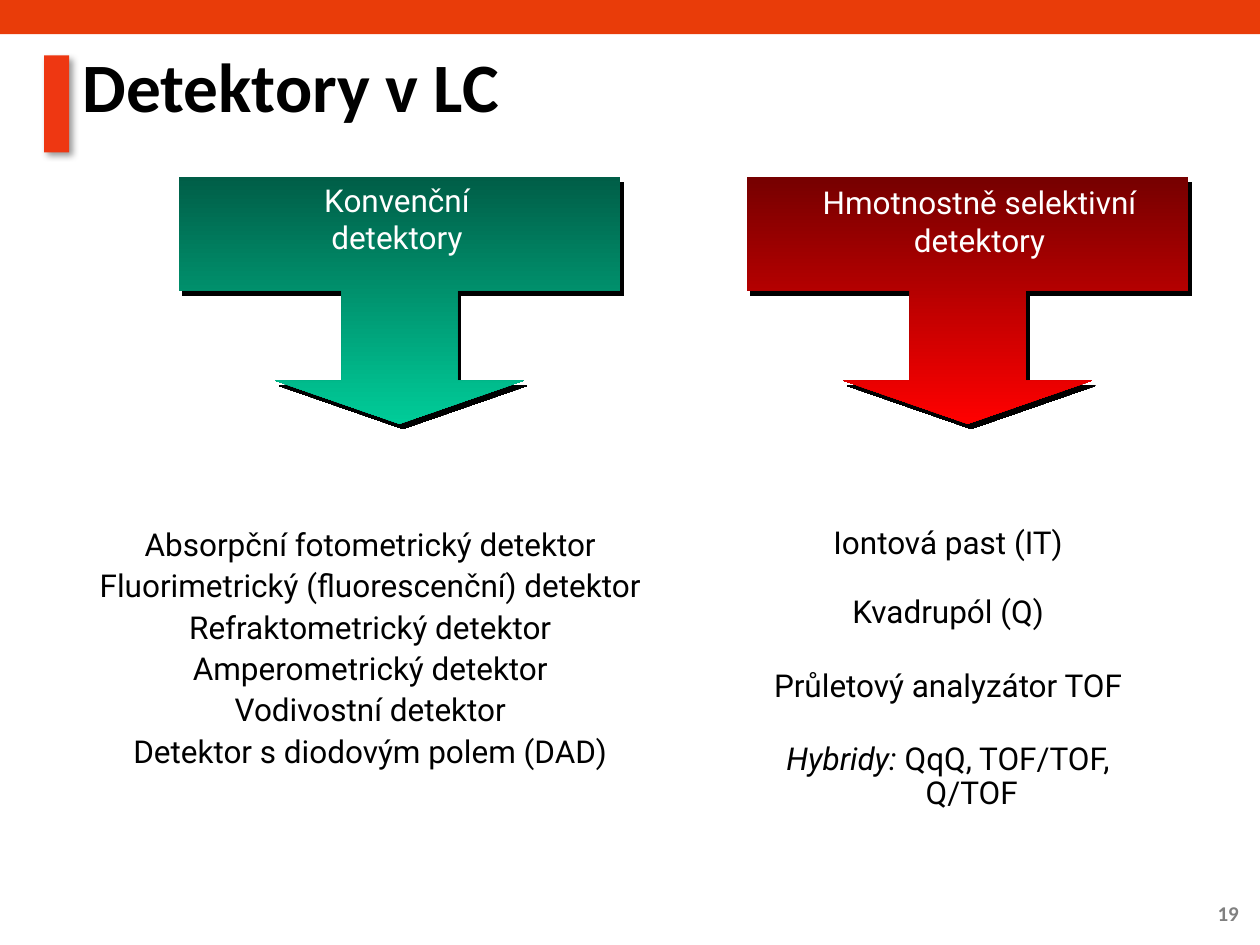
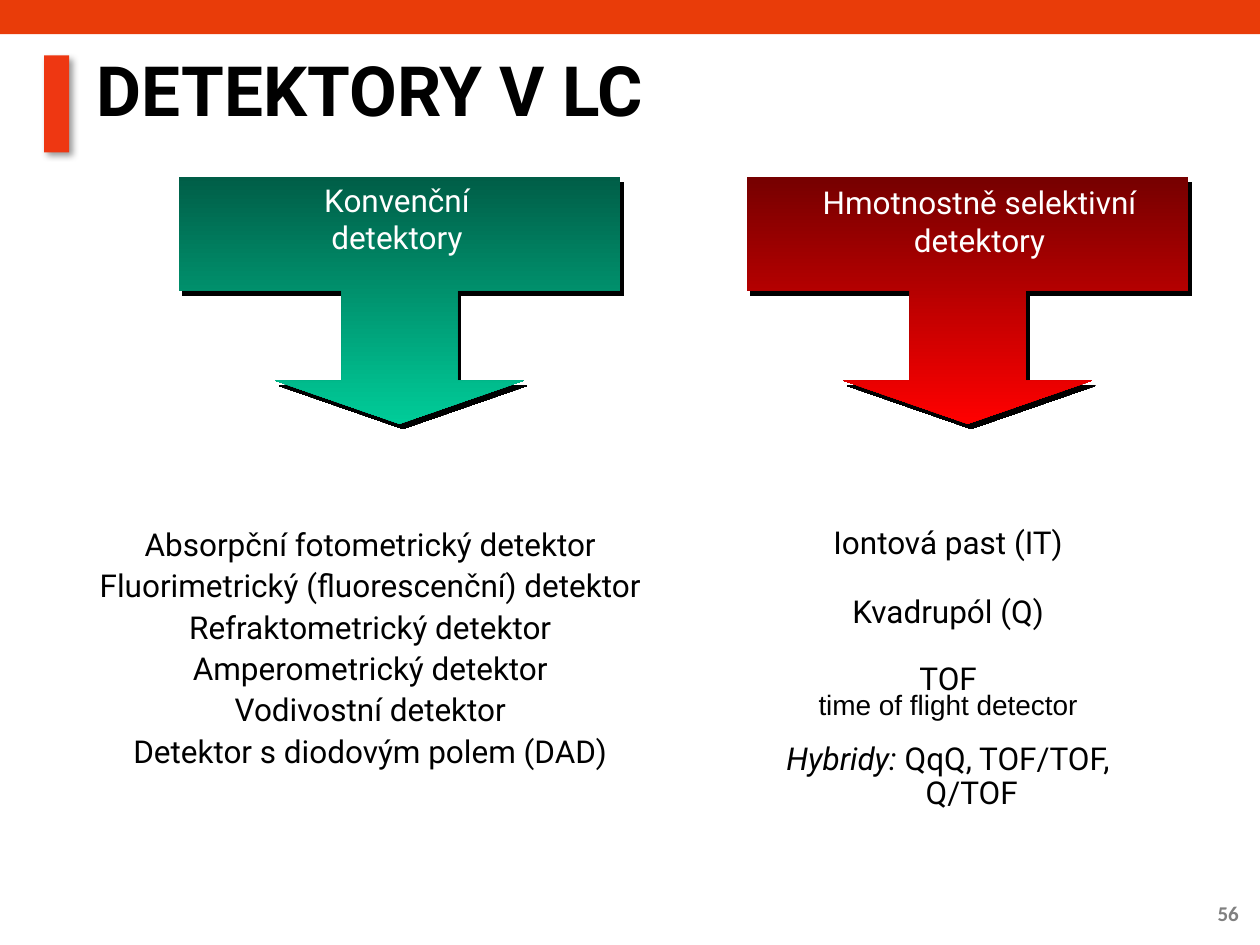
from lxml import etree
from pptx import Presentation
from pptx.dml.color import RGBColor
from pptx.enum.shapes import MSO_SHAPE
from pptx.enum.text import MSO_ANCHOR, MSO_AUTO_SIZE, PP_ALIGN
from pptx.oxml.ns import qn
from pptx.util import Pt

HUES = {
    "band": "E93C09", "mark": "EE3712", "page": "808080",
    "black": "000000", "white": "FFFFFF",
    "wine": "760000", "red": "FF0000",
    "pine": "005E47", "mint": "00CC99",
}
BODY = {"name": "Roboto", "size": Pt(18)}
HEAD = {"size": Pt(39.6), "bold": True}
PAGE = {"name": "Calibri", "size": Pt(12), "bold": True}
NOTE = {"name": "Arial", "size": Pt(16)}
LEAN = {"italic": True}

METHODS = [
    "Absorpční fotometrický detektor",
    "Fluorimetrický (fluorescenční) detektor",
    "Refraktometrický detektor",
    "Amperometrický detektor",
    "Vodivostní detektor",
    "Detektor s diodovým polem (DAD)",
]
HYBRIDS = [[("Hybridy:", LEAN), (" QqQ, TOF/TOF, Q/TOF", {})]]


class Deck:
    """Holds the shared style and the slide being drawn."""

    def __init__(self):
        self.show = Presentation()
        self.show.slide_width, self.show.slide_height = Pt(720), Pt(540)
        self.slide = None

    def start(self, title, font, left, top, inset, page):
        self.slide = self.show.slides.add_slide(self.show.slide_layouts[5])
        self.rect(0, 0, 720, 19.5, "band")
        mark = self.rect(25.2, 31.7, 14.4, 55.4, "mark")
        self.shade(mark, 4, 3, 45, 40)
        self.text(666, 507.6, 49, 28.8, [page], PAGE, "page",
                  align=PP_ALIGN.RIGHT, anchor=MSO_ANCHOR.MIDDLE)
        box = self.slide.shapes.title
        self.place(box, left, top, 655.2, 51.1)
        self.fill_text(box.text_frame, [title], {**HEAD, "name": font}, "black",
                       align=PP_ALIGN.LEFT, anchor=MSO_ANCHOR.MIDDLE, line=0.9)
        box.text_frame.margin_left = Pt(inset)

    def place(self, shape, *spot):
        for key, val in zip(("left", "top", "width", "height"), spot):
            setattr(shape, key, Pt(val))

    def hue(self, key):
        return RGBColor.from_string(HUES[key])

    def rect(self, x, y, w, h, hue):
        shape = self.slide.shapes.add_shape(
            MSO_SHAPE.RECTANGLE, Pt(x), Pt(y), Pt(w), Pt(h))
        shape.shadow.inherit = False
        shape.fill.solid()
        shape.fill.fore_color.rgb = self.hue(hue)
        shape.line.fill.background()
        return shape

    def shade(self, shape, blur, dist, angle, alpha):
        shape.shadow.inherit = False
        glow = shape._element.spPr.find(qn("a:effectLst"))
        cast = etree.SubElement(
            glow, qn("a:outerShdw"), blurRad=str(Pt(blur)), dist=str(Pt(dist)),
            dir=str(angle * 60000), algn="ctr", rotWithShape="0")
        tint = etree.SubElement(cast, qn("a:srgbClr"), val=HUES["black"])
        etree.SubElement(tint, qn("a:alpha"), val=str(alpha * 1000))

    def arrow(self, x, dark, light):
        shape = self.slide.shapes.add_shape(
            MSO_SHAPE.RIGHT_ARROW_CALLOUT, Pt(x), Pt(45.4), Pt(141.1), Pt(252.4))
        shape.rotation = 90
        for i, val in enumerate((0.469, 0.502, 0.174, 0.46)):
            shape.adjustments[i] = val
        shape.fill.gradient()
        shape.fill.gradient_angle = 0
        for stop, key in zip(shape.fill.gradient_stops, (dark, light)):
            stop.color.rgb = self.hue(key)
        shape.line.fill.background()
        self.shade(shape, 0, 3.6, 56, 100)

    def text(self, x, y, w, h, lines, font=BODY, hue="black", **form):
        box = self.slide.shapes.add_textbox(Pt(x), Pt(y), Pt(w), Pt(h))
        self.fill_text(box.text_frame, lines, font, hue, **form)

    def fill_text(self, frame, lines, font, hue, align=PP_ALIGN.CENTER,
                  anchor=MSO_ANCHOR.TOP, line=1.0, gap=0, hang=0):
        frame.word_wrap = True
        frame.auto_size = MSO_AUTO_SIZE.NONE
        frame.vertical_anchor = anchor
        for i, runs in enumerate(lines):
            para = frame.add_paragraph() if i else frame.paragraphs[0]
            form = {"alignment": align, "line_spacing": line,
                    "space_before": Pt(gap if i else 0)}
            for key, val in form.items():
                setattr(para, key, val)
            if hang:
                props = para._p.get_or_add_pPr()
                props.set("marL", str(Pt(hang)))
                props.set("indent", str(Pt(-hang)))
            for words, extra in [(runs, {})] if isinstance(runs, str) else runs:
                run = para.add_run()
                run.text = words
                for key, val in {**font, **extra}.items():
                    setattr(run.font, key, val)
                run.font.color.rgb = self.hue(hue)

    def label(self, x, y, w, lines):
        self.text(x, y, w, 77.8, lines, hue="white", line=0.9, gap=2.1)

    def items(self, x, y, w, lines, line=0.9, gap=4.2):
        self.text(x, y, w, 30.2, lines, line=line, gap=gap, hang=27)

    def body(self, flight, pitch):
        self.arrow(482.4, "wine", "red")
        self.label(433.4, 103.7, 252.7, ["Hmotnostně selektivní", "detektory"])
        self.arrow(157.7, "pine", "mint")
        self.label(103, 102.2, 247.7, ["Konvenční", "detektory"])
        rows = [(["Iontová past (IT)"], 1.0), (["Kvadrupól (Q)"], 0.9),
                (flight, pitch), (HYBRIDS, 0.9)]
        for i, (lines, line) in enumerate(rows):
            self.items(421.9, 295.2 + 42 * i, 239.8, lines, line, 0)
        self.items(15.1, 298.8, 393.1, METHODS)


def main():
    deck = Deck()
    deck.start("Detektory v LC", "Calibri", 31, 25.9, 16.2, "19")
    deck.body(["Průletový analyzátor TOF"], 0.9)
    deck.start("DETEKTORY V LC", "Roboto", 48.2, 28.1, 7.2, "56")
    deck.body(["TOF", [("time of flight detector", NOTE)]], 0.7)
    deck.show.save("out.pptx")


if __name__ == "__main__":
    main()
